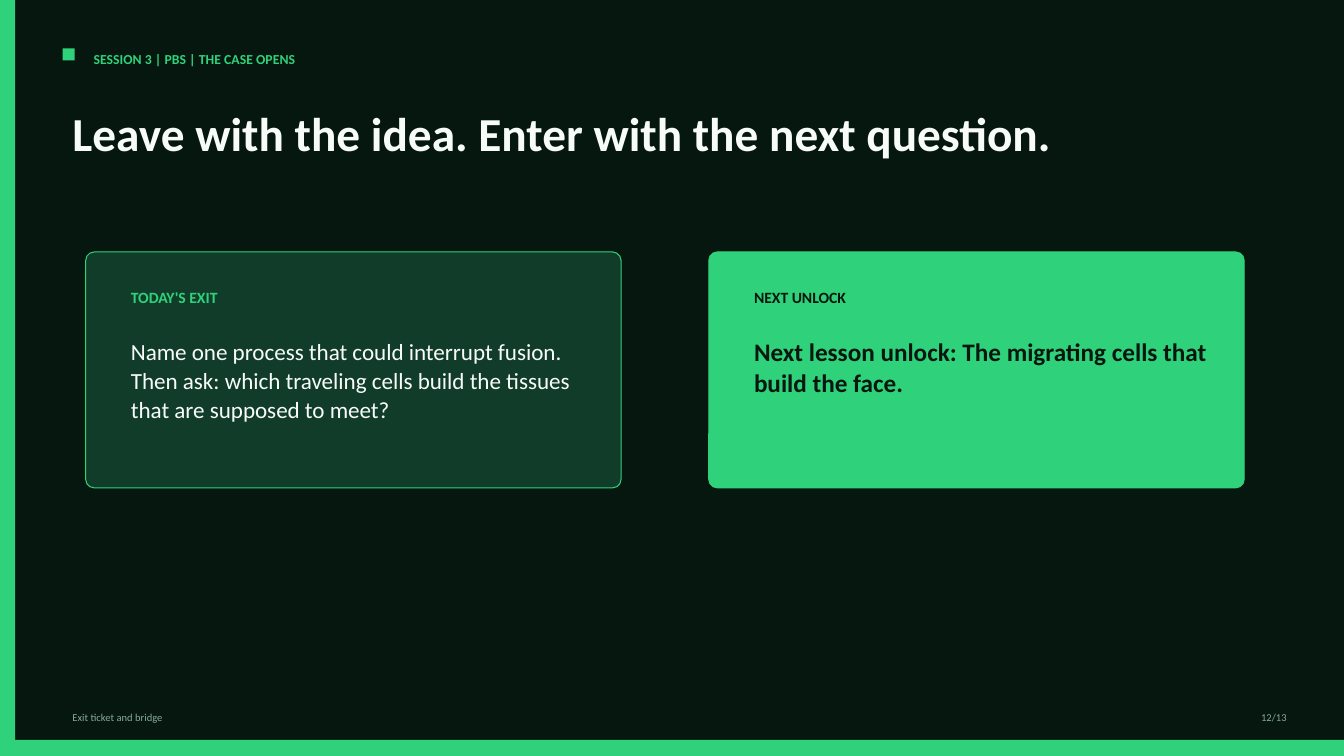
import pptx
import pptx.util
import pptx.dml.color
import pptx.enum.shapes
import pptx.enum.text

Inches = pptx.util.Inches
RGBColor = pptx.dml.color.RGBColor
MSO_SHAPE = pptx.enum.shapes.MSO_SHAPE
PP_ALIGN = pptx.enum.text.PP_ALIGN

INK = RGBColor(0x06, 0x17, 0x0F)
GREEN = RGBColor(0x2F, 0xD2, 0x7A)
FOREST = RGBColor(0x12, 0x3C, 0x2A)
WHITE = RGBColor(0xF7, 0xFC, 0xF9)
MUTED = RGBColor(0x87, 0xAB, 0x9A)

EYEBROW = "SESSION 3 | PBS | THE CASE OPENS"
TITLE = "Leave with the idea. Enter with the next question."
FOOTER = "Exit ticket and bridge"
PAGE = "12/13"
CARDS = [
    {
        "label": "TODAY'S EXIT", "label_color": GREEN, "fill": FOREST,
        "body": "Name one process that could interrupt fusion. Then ask: which "
                "traveling cells build the tissues that are supposed to meet?",
        "style": {"size": 16.5, "color": WHITE, "spacing": 1.06},
    },
    {
        "label": "NEXT UNLOCK", "label_color": INK, "fill": GREEN,
        "body": "Next lesson unlock: The migrating cells that build the face.",
        "style": {"size": 18, "color": INK, "bold": True, "spacing": 1.02},
    },
]

SLIDE_W, SLIDE_H = 13.33, 7.5
MARGIN = 0.62
CARD_X, CARD_Y, CARD_W, CARD_H = 0.85, 2.5, 5.31, 2.34
CARD_PITCH = 6.18
CARD_PAD = 0.35

prs = pptx.Presentation()
prs.slide_width, prs.slide_height = Inches(SLIDE_W), Inches(SLIDE_H)
s = prs.slides.add_slide(prs.slide_layouts[6])
s.background.fill.solid()
s.background.fill.fore_color.rgb = INK


def add_box(x, y, w, h, fill=GREEN, line=None, kind=MSO_SHAPE.RECTANGLE):
    sp = s.shapes.add_shape(kind, Inches(x), Inches(y), Inches(w), Inches(h))
    sp.shadow.inherit = False
    sp.fill.solid()
    sp.fill.fore_color.rgb = fill
    if line is None:
        sp.line.fill.background()
    else:
        sp.line.color.rgb = line
        sp.line.width = pptx.util.Pt(0.75)
    return sp


def add_text(text, x, y, w, h, size=12, color=WHITE, bold=False,
             align=PP_ALIGN.LEFT, spacing=None):
    sp = s.shapes.add_textbox(Inches(x), Inches(y), Inches(w), Inches(h))
    tf = sp.text_frame
    tf.word_wrap = True
    p = tf.paragraphs[0]
    p.alignment = align
    if spacing:
        p.line_spacing = spacing
    r = p.add_run()
    r.text = text
    r.font.name = "Calibri"
    r.font.size = pptx.util.Pt(size)
    r.font.bold = bold
    r.font.color.rgb = color


add_box(0, 0, 0.15, SLIDE_H)
add_box(0, SLIDE_H - 0.16, SLIDE_W, 0.16)
add_box(MARGIN, 0.48, 0.12, 0.12)

add_text(EYEBROW, 0.83, 0.45, 6.46, 0.25, size=9.8, color=GREEN, bold=True)
add_text(FOOTER, MARGIN, 7, 9.38, 0.19, size=7.5, color=MUTED)
add_text(PAGE, 12.03, 7, 0.83, 0.19, size=7.5, color=MUTED, align=PP_ALIGN.RIGHT)
add_text(TITLE, MARGIN, 1.04, 11.46, 0.88, size=33.8, bold=True, spacing=0.92)

for i, card in enumerate(CARDS):
    x = CARD_X + i * CARD_PITCH
    panel = add_box(x, CARD_Y, CARD_W, CARD_H, fill=card["fill"], line=GREEN,
                    kind=MSO_SHAPE.ROUNDED_RECTANGLE)
    panel.adjustments[0] = 0.036
    add_text(card["label"], x + CARD_PAD, CARD_Y + 0.31, 2.29, 0.26,
             size=11.2, color=card["label_color"], bold=True)
    add_text(card["body"], x + CARD_PAD, CARD_Y + 0.78, 4.69, 1.15, **card["style"])

prs.save("out.pptx")
